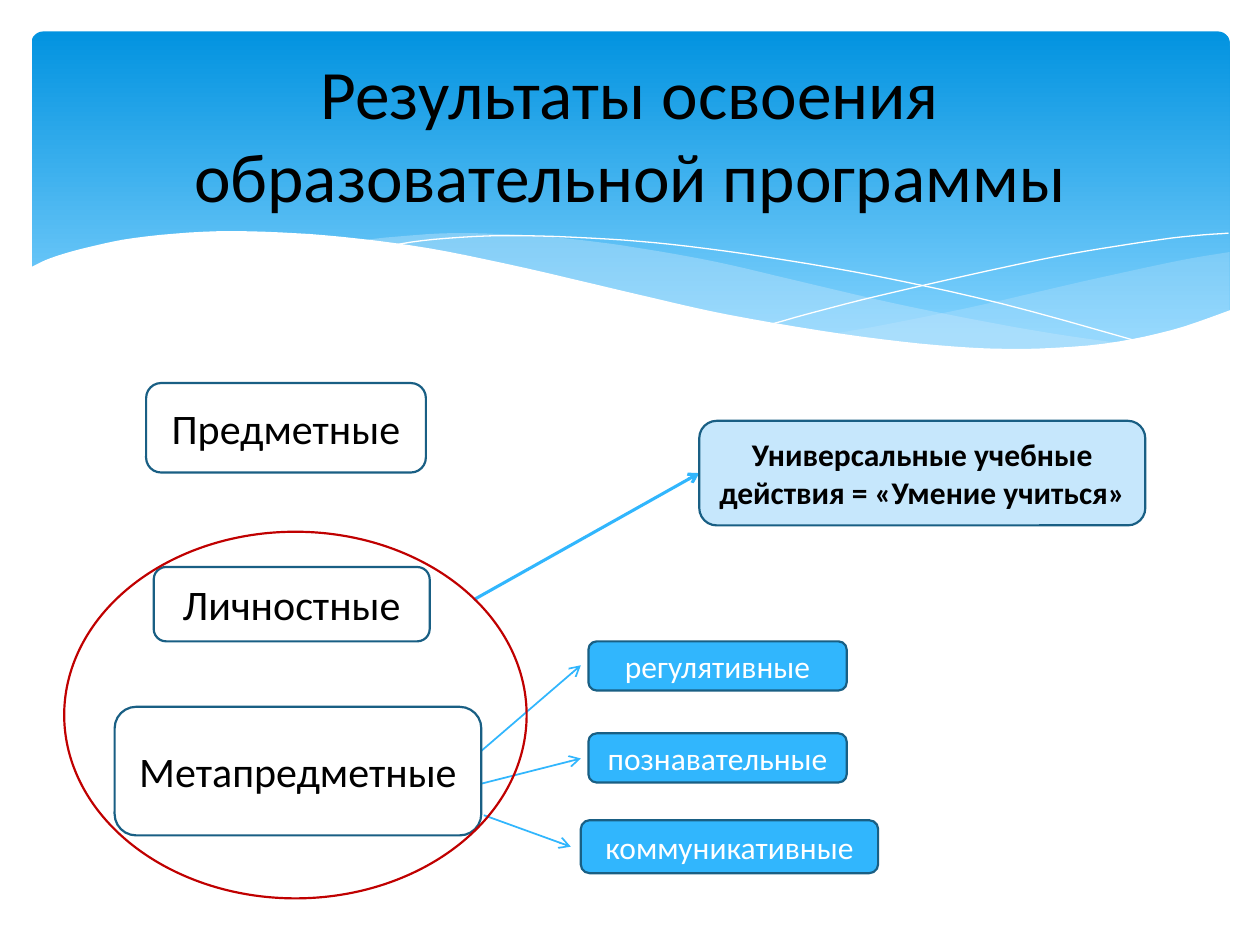
import pptx
import pptx.util
import pptx.dml.color
import pptx.enum.shapes
import pptx.enum.text
import pptx.oxml
import pptx.oxml.ns

SHAPES = pptx.enum.shapes.MSO_SHAPE
BLUE, PALE, NAVY, RED, WHITE, BLACK = "31B6FD", "C6E7FC", "195F84", "C00000", "FFFFFF", "000000"
UNITS = 1000

TITLE = "Результаты освоения образовательной программы"
RESULTS = [
    ("Метапредметные", (0.91, 5.61, 2.91, 1.02)),
    ("Личностные", (1.22, 4.5, 2.19, 0.59)),
    ("Предметные", (1.16, 3.04, 2.22, 0.71)),
]
ACTIONS = [
    ("регулятивные", (4.67, 5.09, 2.05, 0.39)),
    ("познавательные", (4.67, 5.82, 2.05, 0.39)),
    ("коммуникативные", (4.61, 6.51, 2.36, 0.42)),
]
SKILL = ("Универсальные учебные действия = «Умение учиться»", (5.55, 3.34, 3.54, 0.83))
RING = (0.51, 4.22, 3.67, 2.91)
ACTION_ARROWS = [
    ((3.82, 5.96), (4.61, 5.28)),
    ((3.82, 6.22), (4.61, 6.02)),
    ((3.84, 6.47), (4.53, 6.72)),
]
SKILL_ARROW = ((3.76, 4.76), (5.55, 3.75))

VEILS = [
    (29, [
        [(9.76, 2), (9.35, 2.07), (8.61, 2.23), (7.79, 2.42), (7.06, 2.57), (6.61, 2.65)],
        [(6.61, 2.65), (7.05, 2.71), (7.57, 2.76), (8.14, 2.78), (8.72, 2.74),
         (9.21, 2.65), (9.49, 2.57), (9.76, 2.47)],
    ]),
    (40, [
        [(8.93, 2.73), (8.37, 2.65), (7.75, 2.54), (7.06, 2.4), (6.29, 2.22), (5.69, 2.08),
         (5.14, 1.98), (4.65, 1.91), (4.2, 1.87), (3.61, 1.85), (3.13, 1.88), (2.86, 1.91)],
        [(2.86, 1.91), (3.42, 1.99), (4.04, 2.11), (4.91, 2.32), (5.66, 2.48), (6.34, 2.61),
         (6.95, 2.7), (7.48, 2.76), (8.07, 2.78), (8.57, 2.77), (8.93, 2.73)],
    ]),
]
THREADS = [
    [(3.09, 1.95), (3.44, 1.9), (4.01, 1.87), (4.69, 1.89), (5.33, 1.94), (6.08, 2.04),
     (6.95, 2.19), (7.95, 2.41), (9.07, 2.72)],
    [(6.13, 2.57), (6.72, 2.41), (7.48, 2.23), (8.36, 2.04), (8.95, 1.94), (9.38, 1.88), (9.75, 1.85)],
]
SNOW = [
    [(9.77, 2.46), (9.3, 2.62), (8.75, 2.73), (8.09, 2.77), (7.44, 2.74), (6.68, 2.65),
     (5.79, 2.5), (5.03, 2.33), (4.18, 2.13), (3.4, 1.97), (2.71, 1.88), (2.11, 1.84),
     (1.61, 1.84), (1.06, 1.89), (0.67, 1.97), (0.4, 2.05), (0.23, 2.13)],
    [(0.23, 3.29), (9.77, 3.29)],
]


def rgb(colour):
    return pptx.dml.color.RGBColor.from_string(colour)


def inches(values):
    return [pptx.util.Inches(value) for value in values]


def smooth(knots, steps=5):
    padded = [knots[0], *knots, knots[-1]]
    points = [knots[0]]
    for a, b, c, d in zip(padded, padded[1:], padded[2:], padded[3:]):
        for step in range(1, steps + 1):
            t = step / steps
            points.append(tuple(
                b[i] + t * (c[i] - a[i]) / 2
                + t * t * (2 * a[i] - 5 * b[i] + 4 * c[i] - d[i]) / 2
                + t ** 3 * (3 * b[i] - a[i] - 3 * c[i] + d[i]) / 2
                for i in (0, 1)))
    return points


def paint(shape, fill=None, line=None, width=1.25):
    shape.shadow.inherit = False
    if fill:
        shape.fill.solid()
        shape.fill.fore_color.rgb = rgb(fill)
    else:
        shape.fill.background()
    if line:
        shape.line.color.rgb = rgb(line)
        shape.line.width = pptx.util.Pt(width)
    else:
        shape.line.fill.background()


def add_wave(slide, curves, closed=True, **look):
    points = [(round(x * UNITS), round(y * UNITS)) for curve in curves for x, y in smooth(curve)]
    builder = slide.shapes.build_freeform(*points[0], scale=pptx.util.Inches(1) / UNITS)
    builder.add_line_segments(points[1:], close=closed)
    wave = builder.convert_to_shape()
    paint(wave, **look)
    return wave


def write(shape, text, size, colour, bold=False):
    frame = shape.text_frame
    frame.word_wrap = True
    frame.vertical_anchor = pptx.enum.text.MSO_ANCHOR.MIDDLE
    paragraph = frame.paragraphs[0]
    paragraph.alignment = pptx.enum.text.PP_ALIGN.CENTER
    run = paragraph.add_run()
    run.text = text
    run.font.name = "Calibri"
    run.font.size = pptx.util.Pt(size)
    run.font.bold = bold
    run.font.color.rgb = rgb(colour)


def add_card(slide, text, place, size, colour, fill=None, bold=False):
    card = slide.shapes.add_shape(SHAPES.ROUNDED_RECTANGLE, *inches(place))
    paint(card, fill, NAVY)
    write(card, text, size, colour, bold)
    return card


def add_arrow(slide, start, end, width):
    arrow = slide.shapes.add_connector(
        pptx.enum.shapes.MSO_CONNECTOR.STRAIGHT, *inches(start + end))
    arrow.line.color.rgb = rgb(BLUE)
    arrow.line.width = pptx.util.Pt(width)
    head = pptx.oxml.parse_xml(f'<a:tailEnd {pptx.oxml.ns.nsdecls("a")} type="arrow"/>')
    arrow.line._get_or_add_ln().append(head)
    arrow._element.spPr.append(pptx.oxml.parse_xml(f'<a:effectLst {pptx.oxml.ns.nsdecls("a")}/>'))
    return arrow


def add_banner(slide):
    sky = slide.shapes.add_shape(SHAPES.ROUNDED_RECTANGLE, *inches((0.25, 0.25, 9.51, 2.7)))
    sky.adjustments[0] = 0.034
    paint(sky)
    sky.fill.gradient()
    sky.fill.gradient_angle = 270
    for stop, position, colour in zip(sky.fill.gradient_stops, (0, 0.9), ("0293E0", "83D3FE")):
        stop.position = position
        stop.color.rgb = rgb(colour)
    for opacity, curves in VEILS:
        veil = add_wave(slide, curves, fill=PALE)
        tint = veil._element.spPr.find(".//" + pptx.oxml.ns.qn("a:srgbClr"))
        tint.append(pptx.oxml.parse_xml(
            f'<a:alpha {pptx.oxml.ns.nsdecls("a")} val="{opacity * 1000}"/>'))
    for thread in THREADS:
        add_wave(slide, [thread], closed=False, line=WHITE, width=0)
    add_wave(slide, SNOW, fill=WHITE)


def main():
    deck = pptx.Presentation()
    deck.slide_width, deck.slide_height = inches((10, 7.5))
    slide = deck.slides.add_slide(deck.slide_layouts[6])

    add_banner(slide)
    write(slide.shapes.add_textbox(*inches((0.5, 0.37, 9, 1.37))), TITLE, 39.6, BLACK)
    for start, end in ACTION_ARROWS:
        add_arrow(slide, start, end, 1)
    for text, place in ACTIONS:
        add_card(slide, text, place, 18, WHITE, BLUE)
    for text, place in RESULTS:
        add_card(slide, text, place, 24, BLACK)
    skill_arrow = add_arrow(slide, *SKILL_ARROW, 1.75)
    paint(slide.shapes.add_shape(SHAPES.OVAL, *inches(RING)), line=RED)
    skill = add_card(slide, *SKILL, 18, BLACK, PALE, bold=True)
    skill_arrow.end_connect(skill, 1)

    deck.save("out.pptx")


if __name__ == "__main__":
    main()
